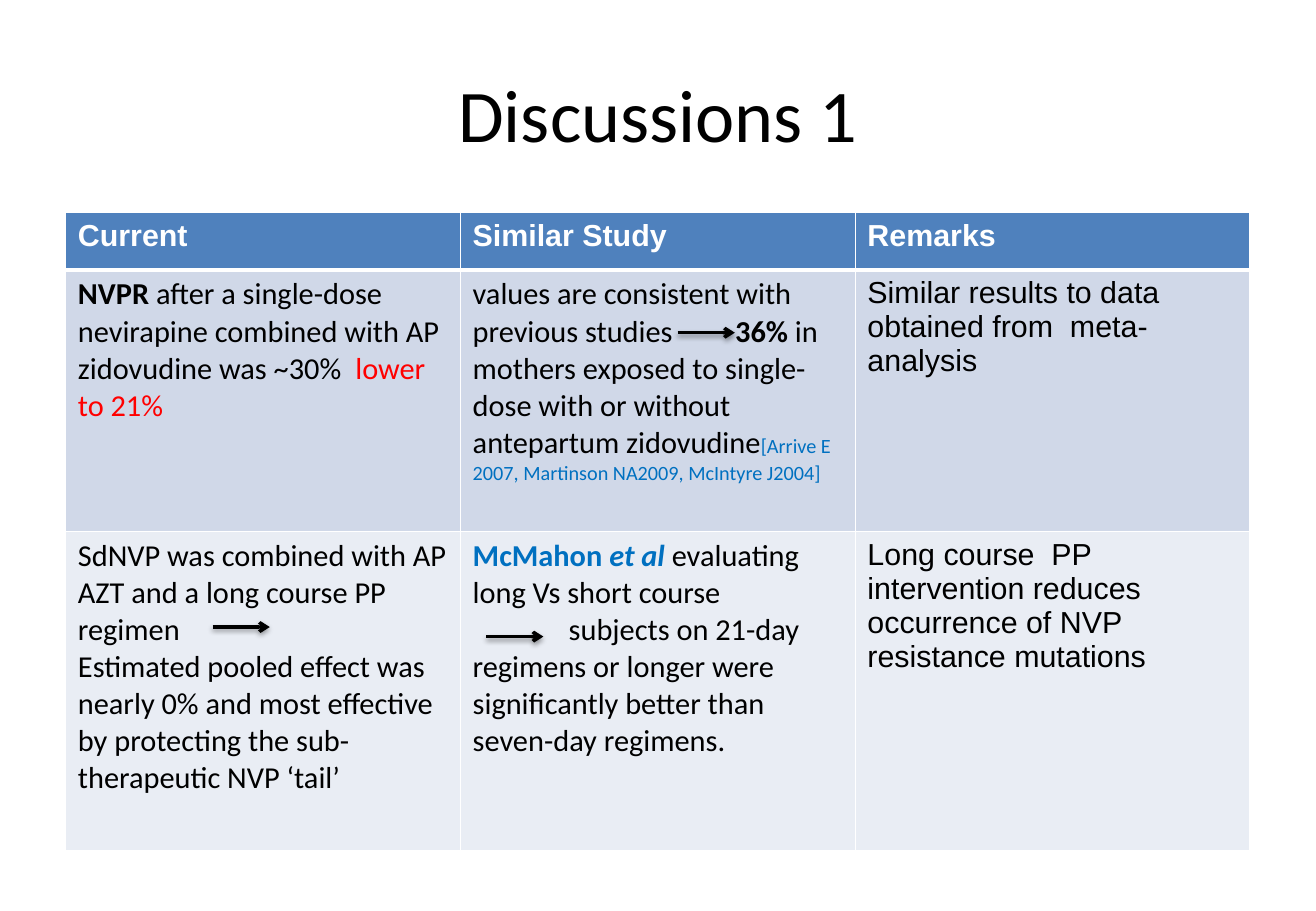
"""Build the Discussions 1 slide: a comparison table with three arrows."""
from lxml.etree import SubElement
from pptx import Presentation
from pptx.dml.color import RGBColor
from pptx.enum.shapes import MSO_CONNECTOR as Connector
from pptx.enum.text import MSO_ANCHOR as Anchor, PP_ALIGN as Align
from pptx.oxml.ns import qn
from pptx.util import Inches, Pt

BLACK = RGBColor(0x00, 0x00, 0x00)
WHITE = RGBColor(0xFF, 0xFF, 0xFF)
RED = RGBColor(0xFF, 0x00, 0x00)
CITE_BLUE = RGBColor(0x00, 0x70, 0xC0)
HEADER_FILL = RGBColor(0x4F, 0x81, 0xBD)
ROW_FILLS = [HEADER_FILL, RGBColor(0xD0, 0xD8, 0xE8), RGBColor(0xE9, 0xED, 0xF4)]

TITLE = "Discussions 1"
BODY = {"name": "Calibri", "size": Pt(18), "bold": False, "italic": False, "color": BLACK}
ARIAL = {"name": "Arial"}
HEADER = {"name": "Arial", "bold": True, "color": WHITE}
BOLD = {"bold": True}
AUTHOR = {"bold": True, "color": CITE_BLUE}

ROWS = [
    [[[("Current", HEADER)]], [[("Similar Study", HEADER)]], [[("Remarks", HEADER)]]],
    [
        [[("NVPR ", BOLD),
          ("after a single-dose nevirapine combined with AP zidovudine was ~30%  ", {}),
          ("lower to 21%", {"color": RED})]],
        [[("values are consistent with previous studies\t", {}),
          ("36% ", BOLD),
          ("in mothers exposed to single-dose with or without antepartum zidovudine", {}),
          ("[Arrive E 2007, Martinson NA2009, McIntyre J2004]",
           {"size": Pt(12), "color": CITE_BLUE})]],
        [[("Similar results to data obtained from  meta-analysis", ARIAL)]],
    ],
    [
        [[("SdNVP was combined with AP AZT and a long course PP regimen", {})],
         [("Estimated pooled effect was nearly 0% and most effective by protecting "
           "the sub-therapeutic NVP ‘tail’", {})]],
        [[("McMahon ", AUTHOR),
          ("et al ", {**AUTHOR, "italic": True}),
          ("evaluating long Vs short course", {})],
         [("subjects on 21-day regimens or longer were significantly better than "
           "seven-day regimens.", {})]],
        [[("Long course  PP intervention reduces occurrence of NVP resistance mutations",
           ARIAL)]],
    ],
]
ROW_SHARES = [0.09, 0.41, 0.5]
ARROWS = [(2, 1, 0.065, 0.33), (2, 0, 0.372, 0.3), (1, 1, 0.55, 0.24)]
ARROW_LENGTH = Inches(0.47)
STUDY_TAB = Inches(2.16)
SUBJECTS_INDENT = Inches(0.79)


def add_runs(para, runs):
    """Write styled runs into a paragraph."""
    for text, style in runs:
        span = para.add_run()
        span.text = text
        values = {**BODY, **style}
        span.font.color.rgb = values.pop("color")
        for key, value in values.items():
            setattr(span.font, key, value)


def add_borders(cell, row):
    """Draw white borders, thicker between header and body."""
    properties = cell._tc.get_or_add_tcPr()
    widths = {"L": 1, "R": 1, "T": 3 if row == 1 else 1, "B": 3 if row == 0 else 1}
    for side, width in widths.items():
        line = SubElement(properties, qn(f"a:ln{side}"), w=str(Pt(width)))
        fill = SubElement(line, qn("a:solidFill"))
        SubElement(fill, qn("a:srgbClr"), val=str(WHITE))


def fill_cell(cell, row, paragraphs):
    """Format one cell and write its paragraphs."""
    add_borders(cell, row)
    cell.fill.solid()
    cell.fill.fore_color.rgb = ROW_FILLS[row]
    frame = cell.text_frame
    for index, runs in enumerate(paragraphs):
        para = frame.add_paragraph() if index else frame.paragraphs[0]
        properties = para._p.get_or_add_pPr()
        if "\t" in runs[0][0]:
            tabs = SubElement(properties, qn("a:tabLst"))
            SubElement(tabs, qn("a:tab"), pos=str(STUDY_TAB), algn="l")
        if runs[0][0].startswith("subjects"):
            properties.set("marL", "0")
            properties.set("indent", str(SUBJECTS_INDENT))
        add_runs(para, runs)


def add_arrow(slide, left, top):
    """Draw a short right arrow with a soft shadow."""
    arrow = slide.shapes.add_connector(
        Connector.STRAIGHT, left, top, left + ARROW_LENGTH, top)
    arrow.line.color.rgb = BLACK
    arrow.line.width = Pt(2)
    properties = arrow.element.spPr
    SubElement(properties.find(qn("a:ln")), qn("a:tailEnd"), type="arrow")
    effects = SubElement(properties, qn("a:effectLst"))
    shadow = SubElement(effects, qn("a:outerShdw"), blurRad=str(Pt(3.1)),
                        dist=str(Pt(1.6)), dir="5400000", rotWithShape="0")
    color = SubElement(shadow, qn("a:srgbClr"), val=str(BLACK))
    SubElement(color, qn("a:alpha"), val="38000")


def main():
    """Build and save the deck."""
    deck = Presentation()
    deck.slide_width, deck.slide_height = Inches(10.83), Inches(7.5)
    left, width = int(deck.slide_width * 0.05), int(deck.slide_width * 0.9)
    top, height = Inches(1.75), int(deck.slide_height * 0.7)
    slide = deck.slides.add_slide(deck.slide_layouts[5])

    title = slide.shapes.title
    title.left, title.top = left, int(deck.slide_height * 0.04)
    title.width, title.height = width, Inches(1.25)
    title.text_frame.vertical_anchor = Anchor.MIDDLE
    heading = title.text_frame.paragraphs[0]
    heading.alignment = Align.CENTER
    add_runs(heading, [(TITLE, {"size": Pt(44)})])

    table = slide.shapes.add_table(len(ROWS), len(ROWS[0]), left, top, width, height).table
    table.horz_banding = False
    column_width = width // len(ROWS[0])
    for column in table.columns:
        column.width = column_width
    for row, (share, cells) in enumerate(zip(ROW_SHARES, ROWS)):
        table.rows[row].height = int(height * share)
        for column, paragraphs in enumerate(cells):
            fill_cell(table.cell(row, column), row, paragraphs)

    for row, column, across, down in ARROWS:
        above = sum(ROW_SHARES[:row])
        add_arrow(slide, int(left + (column + across) * column_width),
                  int(top + (above + down * ROW_SHARES[row]) * height))
    deck.save("out.pptx")


if __name__ == "__main__":
    main()
